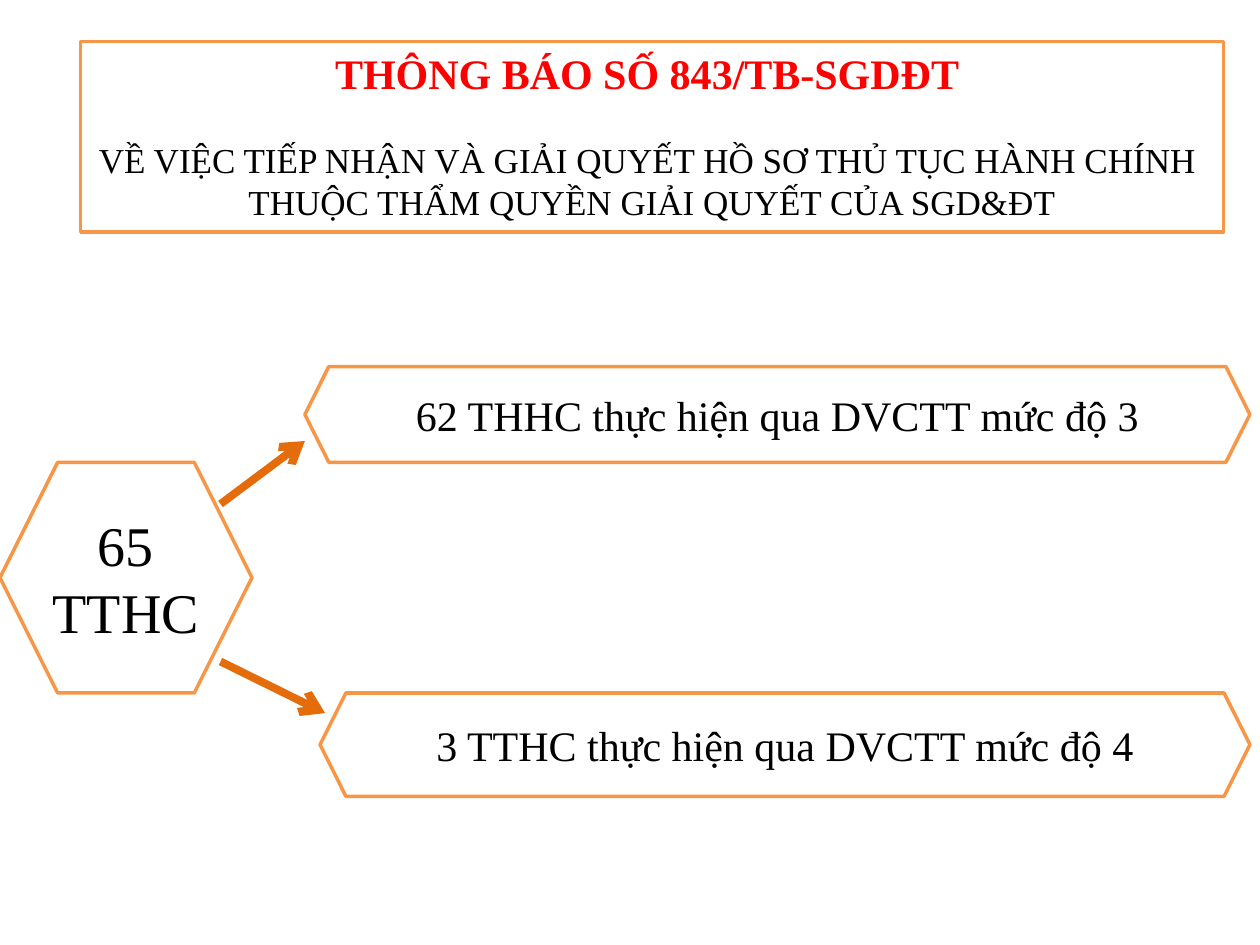
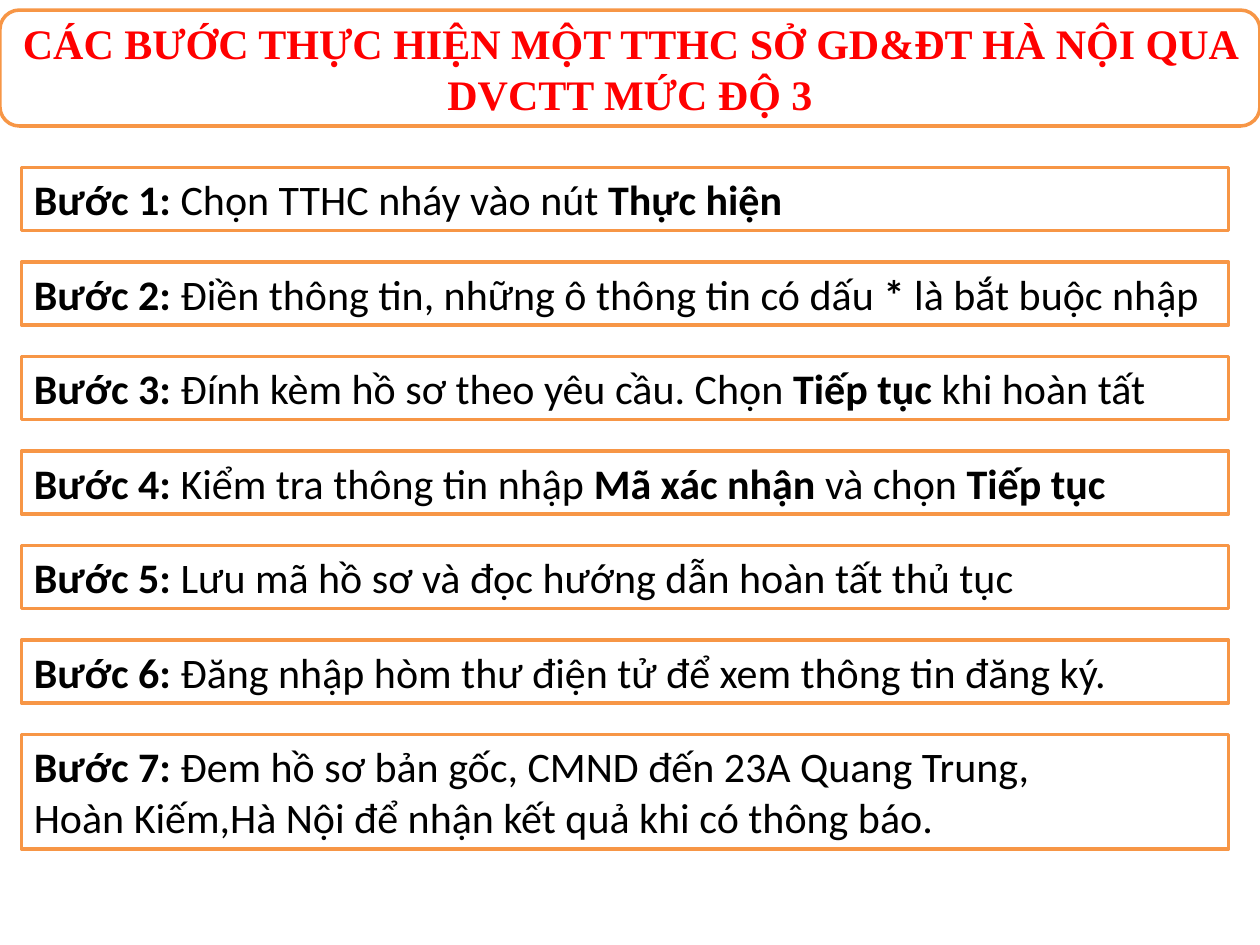
from dataclasses import dataclass

import pptx
import pptx.dml.color
import pptx.enum.shapes
import pptx.enum.text
import pptx.oxml
import pptx.oxml.ns
import pptx.util
from pptx.util import Inches

COLORS = {
    "paper": "FFFFFF",
    "border": "F79646",
    "arrow": "E46C0A",
    "title": "FF0000",
    "text": "000000",
}
SERIF = "Times New Roman"
SANS = "Calibri"
SHAPES = pptx.enum.shapes.MSO_SHAPE
ALIGN = pptx.enum.text.PP_ALIGN
ANCHOR = pptx.enum.text.MSO_ANCHOR
TITLE_ONLY = 5
BOLD_MARK = "|"  # switches bold on and off inside a text


@dataclass
class Box:
    left: float
    top: float
    width: float
    height: float


@dataclass
class Hexagon:
    box: Box
    text: str
    size: int = 24


@dataclass
class Arrow:
    start: tuple[float, float]
    end: tuple[float, float]


def rgb(name: str):
    return pptx.dml.color.RGBColor.from_string(COLORS[name])


def outline(shape) -> None:
    shape.line.color.rgb = rgb("border")
    shape.line.width = pptx.util.Pt(2)


def place(shape, box: Box) -> None:
    shape.left, shape.top = Inches(box.left), Inches(box.top)
    shape.width, shape.height = Inches(box.width), Inches(box.height)


def add_paragraph(frame, text: str, *, size: int, font: str = SERIF, color: str = "text",
                  bold: bool = False, align=ALIGN.CENTER, before: float = 0) -> None:
    """Fill the first paragraph if it is empty, otherwise append one."""
    paragraph = frame.paragraphs[0] if not frame.text else frame.add_paragraph()
    paragraph.alignment = align
    paragraph.space_before = pptx.util.Pt(before)
    for index, part in enumerate(text.split(BOLD_MARK)):
        if not part:
            continue
        run = paragraph.add_run()
        run.text = part
        run.font.name = font
        run.font.size = pptx.util.Pt(size)
        run.font.bold = bold or index % 2 == 1
        run.font.color.rgb = rgb(color)


def add_box(slide, kind, box: Box, anchor=ANCHOR.MIDDLE):
    shape = slide.shapes.add_shape(kind, 0, 0, 0, 0)
    place(shape, box)
    shape.shadow.inherit = False
    shape.fill.solid()
    shape.fill.fore_color.rgb = rgb("paper")
    outline(shape)
    shape.text_frame.word_wrap = True
    shape.text_frame.vertical_anchor = anchor
    return shape


def add_title(slide, box: Box, text: str, anchor=ANCHOR.MIDDLE):
    title = slide.shapes.title
    place(title, box)
    frame = title.text_frame
    frame.auto_size = pptx.enum.text.MSO_AUTO_SIZE.NONE
    frame.word_wrap = True
    frame.vertical_anchor = anchor
    add_paragraph(frame, text, size=24, color="title", bold=True)
    return title


def add_arrow(slide, arrow: Arrow) -> None:
    connector = slide.shapes.add_connector(
        pptx.enum.shapes.MSO_CONNECTOR.STRAIGHT,
        *(Inches(length) for length in arrow.start + arrow.end))
    connector.line.color.rgb = rgb("arrow")
    connector.line.width = pptx.util.Pt(4.5)
    namespace = pptx.oxml.ns.nsdecls("a")
    connector.line._get_or_add_ln().append(
        pptx.oxml.parse_xml(f'<a:tailEnd {namespace} type="arrow"/>'))
    connector._element.spPr.append(pptx.oxml.parse_xml(f"<a:effectLst {namespace}/>"))


# Slide 1: the notice and how the procedures divide
HEXAGONS = [
    Hexagon(Box(0, 3.67, 2, 1.83), "65 TTHC", 32),
    Hexagon(Box(2.42, 2.91, 7.5, 0.76), "62 THHC thực hiện qua DVCTT mức độ 3"),
    Hexagon(Box(2.54, 5.5, 7.38, 0.82), "3 TTHC thực hiện qua DVCTT mức độ 4"),
]
ARROWS = [Arrow((1.75, 4), (2.42, 3.5)), Arrow((1.75, 5.25), (2.58, 5.66))]


def build_notice(slide) -> None:
    title = add_title(slide, Box(0.64, 0.33, 9.07, 1.51),
                      "THÔNG BÁO SỐ 843/TB-SGDĐT ", ANCHOR.TOP)
    outline(title)
    title.text_frame.word_wrap = False
    add_paragraph(title.text_frame,
                  "VỀ VIỆC TIẾP NHẬN VÀ GIẢI QUYẾT HỒ SƠ THỦ TỤC HÀNH CHÍNH ",
                  size=20, before=23)
    add_paragraph(title.text_frame, "THUỘC THẨM QUYỀN GIẢI QUYẾT CỦA SGD&ĐT", size=20)
    for hexagon in HEXAGONS:
        shape = add_box(slide, SHAPES.HEXAGON, hexagon.box)
        add_paragraph(shape.text_frame, hexagon.text, size=hexagon.size)
    for arrow in ARROWS:
        add_arrow(slide, arrow)


# Slide 2: the steps, each a list of lines
STEPS = [
    ["Chọn TTHC nháy vào nút |Thực hiện|"],
    ["Điền thông tin, những ô thông tin có dấu |*| là bắt buộc nhập"],
    ["Đính kèm hồ sơ theo yêu cầu. Chọn |Tiếp tục |khi hoàn tất"],
    ["Kiểm tra thông tin nhập| Mã xác nhận |và chọn |Tiếp tục|"],
    ["Lưu mã hồ sơ và đọc hướng dẫn hoàn tất thủ tục"],
    ["Đăng nhập hòm thư điện tử để xem thông tin đăng ký."],
    ["Đem hồ sơ bản gốc, CMND đến 23A Quang Trung,",
     "Hoàn Kiếm,Hà Nội để nhận kết quả khi có thông báo."],
]
FIRST_STEP_TOP = 1.33
STEP_PITCH = 0.75
STEP_HEIGHT = 0.5
EXTRA_LINE_HEIGHT = 0.41


def build_steps(slide) -> None:
    banner = Box(0, 0.08, 10, 0.92)
    add_title(slide, banner,
              "CÁC BƯỚC THỰC HIỆN MỘT TTHC SỞ GD&ĐT HÀ NỘI QUA DVCTT MỨC ĐỘ 3")
    # The frame lies above the title, so it stays unfilled
    add_box(slide, SHAPES.ROUNDED_RECTANGLE, banner).fill.background()
    for index, lines in enumerate(STEPS):
        box = Box(0.17, FIRST_STEP_TOP + index * STEP_PITCH, 9.58,
                  STEP_HEIGHT + (len(lines) - 1) * EXTRA_LINE_HEIGHT)
        frame = add_box(slide, SHAPES.RECTANGLE, box, ANCHOR.TOP).text_frame
        label = f"|Bước {index + 1}: |"
        for line in [label + lines[0], *lines[1:]]:
            add_paragraph(frame, line, size=24, font=SANS, align=ALIGN.LEFT)


def main() -> None:
    presentation = pptx.Presentation()
    presentation.slide_width, presentation.slide_height = Inches(10), Inches(7.5)
    for build in (build_notice, build_steps):
        build(presentation.slides.add_slide(presentation.slide_layouts[TITLE_ONLY]))
    presentation.save("out.pptx")


if __name__ == "__main__":
    main()
